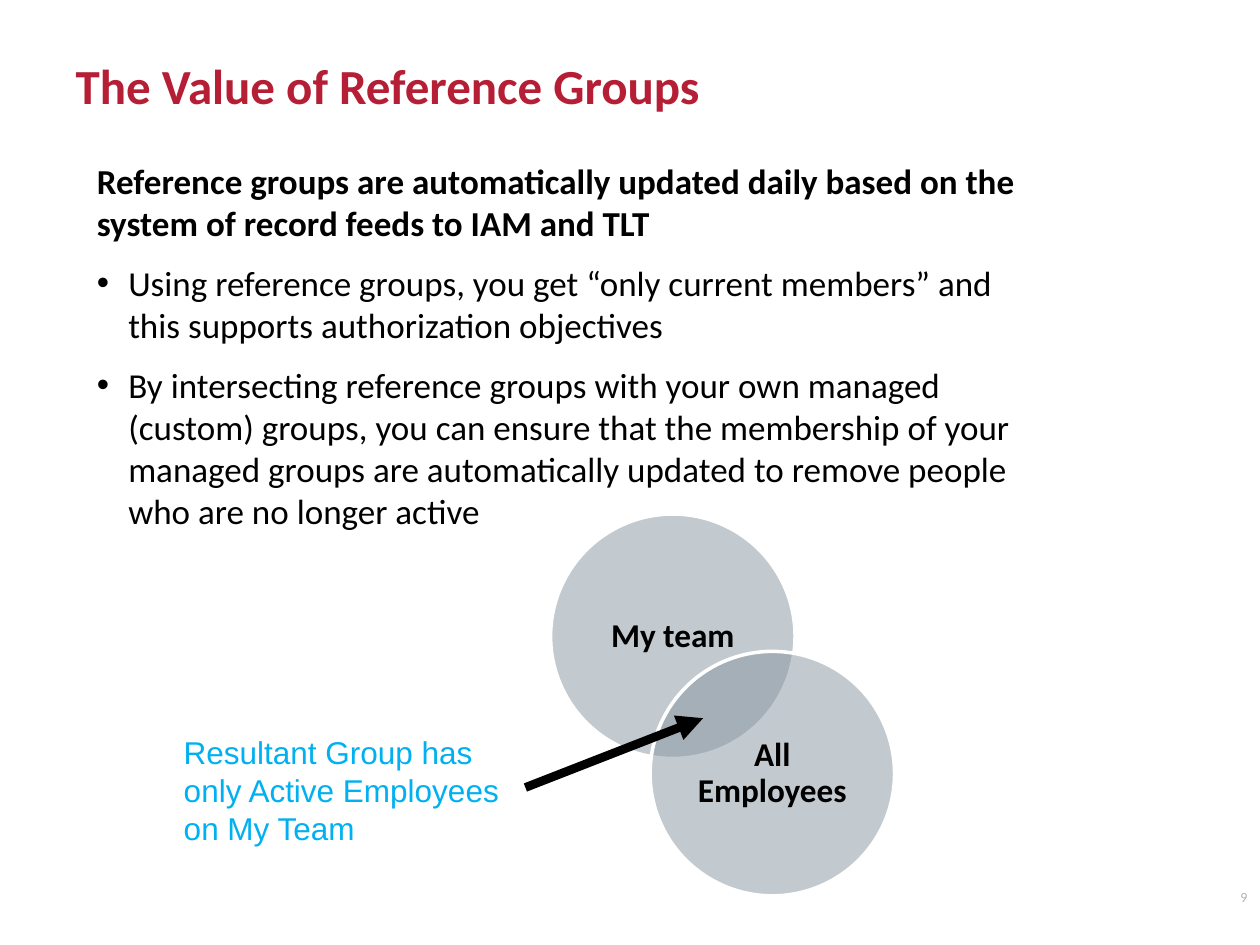
"""Build the slide on the value of reference groups."""
from dataclasses import dataclass

from lxml.etree import SubElement
from pptx import Presentation
from pptx.dml.color import RGBColor
from pptx.enum.shapes import MSO_CONNECTOR, MSO_SHAPE
from pptx.enum.text import MSO_ANCHOR as Anchor, PP_ALIGN as Align
from pptx.oxml.ns import qn
from pptx.util import Inches, Pt

RED = RGBColor(0xB5, 0x1E, 0x34)
BLACK = RGBColor(0, 0, 0)
WHITE = RGBColor(0xFF, 0xFF, 0xFF)
GREY = RGBColor(0xB2, 0xB2, 0xB2)
SLATE = RGBColor(0x89, 0x96, 0xA0)
CYAN = RGBColor(0x00, 0xB0, 0xF0)

DIAMETER = 1.94


@dataclass
class Style:
    size: int
    color: RGBColor = BLACK
    bold: bool = False
    font: str = "Calibri"


@dataclass
class Circle:
    label: str
    left: float
    top: float


@dataclass
class Point:
    text: str
    bullet: bool = True


POINTS = [
    Point("Reference groups are automatically updated daily based on the "
          "system of record feeds to IAM and TLT", bullet=False),
    Point("Using reference groups, you get “only current members” and this "
          "supports authorization objectives"),
    Point("By intersecting reference groups with your own managed (custom) "
          "groups, you can ensure that the membership of your managed groups "
          "are automatically updated to remove people who are no longer active"),
]
CIRCLES = [Circle("My team", 4.37, 4.08), Circle("All Employees", 5.16, 5.17)]


def write(p, text: str, style: Style, align=Align.LEFT) -> None:
    p.text = text
    p.alignment = align
    for r in p.runs:
        r.font.name = style.font
        r.font.size = Pt(style.size)
        r.font.bold = style.bold
        r.font.color.rgb = style.color


def add_text(s, box: tuple, anchor=Anchor.TOP):
    tf = s.shapes.add_textbox(*map(Inches, box)).text_frame
    tf.word_wrap = True
    tf.vertical_anchor = anchor
    return tf


def add_bullet(p) -> None:
    pPr = p._p.get_or_add_pPr()
    pPr.set("marL", str(Inches(0.25)))
    pPr.set("indent", str(Inches(-0.25)))
    SubElement(pPr, qn("a:buFont")).set("typeface", "Arial")
    SubElement(pPr, qn("a:buChar")).set("char", "•")


def add_points(s, points: list[Point]) -> None:
    tf = add_text(s, (0.67, 1.22, 7.5, 3.12))
    for i, point in enumerate(points):
        p = tf.add_paragraph() if i else tf.paragraphs[0]
        write(p, point.text, Style(20, bold=not point.bullet))
        p.space_before, p.space_after = Pt(4), Pt(6)
        if point.bullet:
            add_bullet(p)


def add_circle(s, circle: Circle) -> None:
    sp = s.shapes.add_shape(MSO_SHAPE.OVAL, Inches(circle.left), Inches(circle.top),
                            Inches(DIAMETER), Inches(DIAMETER))
    sp.shadow.inherit = False
    sp.fill.solid()
    sp.fill.fore_color.rgb = SLATE
    color = sp._element.spPr.find(qn("a:solidFill"))[0]
    SubElement(color, qn("a:alpha")).set("val", "50000")
    sp.line.color.rgb = WHITE
    sp.line.width = Pt(2)
    tf = sp.text_frame
    tf.word_wrap = True
    tf.vertical_anchor = Anchor.MIDDLE
    tf.margin_left = tf.margin_right = tf.margin_top = tf.margin_bottom = Inches(0.08)
    p = tf.paragraphs[0]
    write(p, circle.label, Style(19, bold=True), Align.CENTER)
    p.line_spacing = 0.9


def add_arrow(s, start: tuple, end: tuple) -> None:
    line = s.shapes.add_connector(MSO_CONNECTOR.STRAIGHT, *map(Inches, start + end))
    line.line.color.rgb = BLACK
    line.line.width = Pt(5)
    SubElement(line.line._get_or_add_ln(), qn("a:tailEnd")).set("type", "triangle")
    SubElement(line._element.spPr, qn("a:effectLst"))


def main() -> None:
    prs = Presentation()
    prs.slide_width, prs.slide_height = Inches(10), Inches(7.5)
    s = prs.slides.add_slide(prs.slide_layouts[5])

    title = s.shapes.title
    title.left, title.top, title.width, title.height = map(Inches, (0.5, 0.17, 9, 1))
    title.text_frame.vertical_anchor = Anchor.MIDDLE
    write(title.text_frame.paragraphs[0], "The Value of Reference Groups",
          Style(28, RED, bold=True))

    add_points(s, POINTS)
    number = add_text(s, (7, 6.92, 3, 0.4), Anchor.MIDDLE)
    write(number.paragraphs[0], "9", Style(8, GREY), Align.RIGHT)
    for circle in CIRCLES:
        add_circle(s, circle)
    result = add_text(s, (1.36, 5.77, 2.82, 1.01))
    write(result.paragraphs[0], "Resultant Group has only Active Employees on My Team",
          Style(18, CYAN, font="Arial"))
    add_arrow(s, (4.17, 6.25), (5.58, 5.7))
    prs.save("out.pptx")


if __name__ == "__main__":
    main()
